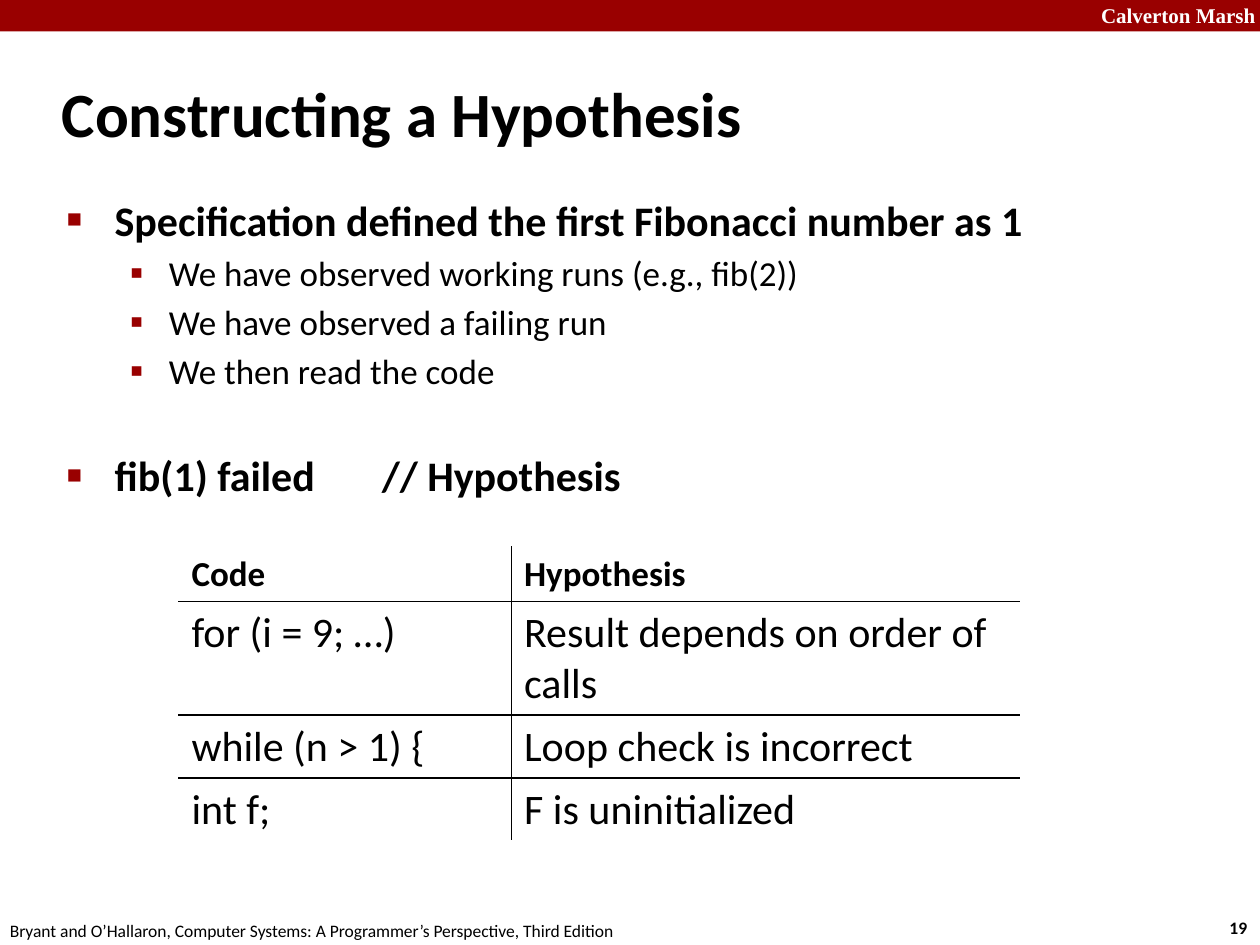
from lxml.etree import SubElement
from pptx import Presentation
from pptx.dml.color import RGBColor
from pptx.enum.shapes import MSO_SHAPE
from pptx.enum.text import MSO_ANCHOR, MSO_AUTO_SIZE, PP_ALIGN
from pptx.oxml import parse_xml
from pptx.oxml.ns import nsdecls, qn
from pptx.util import Inches, Pt

RED, BLACK, WHITE = "990000", "000000", "FFFFFF"
SANS, SERIF = "Calibri", "Times New Roman"

TITLE = "Constructing a Hypothesis"
BULLETS = [
    (0, "Specification defined the first Fibonacci number as 1", 4.8),
    (1, "We have observed working runs (e.g., fib(2))", 4),
    (1, "We have observed a failing run", 4),
    (1, "We then read the code", 4),
    (0, "fib(1) failed\t\t// Hypothesis", 33),
]
LEVELS = [
    dict(size=24, bold=True, left=0.38, hanging=0.38, mark="■", percent=60),
    dict(size=20, bold=False, left=0.81, hanging=0.31, mark="▪", percent=110),
]
ROWS = [
    ("Code", "Hypothesis"),
    ("for (i = 9; …)", "Result depends on order of calls"),
    ("while (n > 1) {", "Loop check is incorrect"),
    ("int f;", "F is uninitialized"),
]
COLUMN_WIDTHS = [2.64, 4.03]
ROW_HEIGHT = 0.41
LABELS = [
    ("Calverton Marsh", (8.64, -0.03, 1.43, 0.3), 12, SERIF, WHITE, True, True),
    ("19", (9.66, 7.23, 0.37, 0.27), 10, SANS, BLACK, True, False),
    ("Bryant and O’Hallaron, Computer Systems: A Programmer’s Perspective, Third Edition",
     (-0.02, 7.25, 5.08, 0.27), 10, SANS, BLACK, False, False),
]


def color(value):
    return RGBColor.from_string(value)


def add_span(para, text, size, bold=False, font=SANS, ink=BLACK):
    span = para.add_run()
    span.text = text
    span.font.size = Pt(size)
    span.font.bold = bold
    span.font.name = font
    span.font.color.rgb = color(ink)


def place(box, left, top, width, height):
    box.left, box.top = Inches(left), Inches(top)
    box.width, box.height = Inches(width), Inches(height)


def set_indent(para, left, hanging):
    props = para._p.get_or_add_pPr()
    props.set("marL", str(Inches(left)))
    props.set("indent", str(-Inches(hanging)))
    return props


def add_bullet(para, level, text, space):
    style = LEVELS[level]
    para.level = level
    para.space_before = Pt(space)
    props = set_indent(para, style["left"], style["hanging"])
    tint = SubElement(props, qn("a:buClr"))
    SubElement(tint, qn("a:srgbClr")).set("val", RED)
    SubElement(props, qn("a:buSzPct")).set("val", str(style["percent"] * 1000))
    SubElement(props, qn("a:buChar")).set("char", style["mark"])
    add_span(para, text, style["size"], style["bold"])


def set_borders(cell, sides):
    props = cell._tc.get_or_add_tcPr()
    for position, side in enumerate(sides):
        props.insert(position, parse_xml(
            f'<a:ln{side} {nsdecls("a")} w="{Pt(1)}"><a:solidFill>'
            f'<a:srgbClr val="{BLACK}"/></a:solidFill></a:ln{side}>'))


def add_labels(page):
    for text, frame, size, font, ink, bold, wrap in LABELS:
        box = page.shapes.add_textbox(*map(Inches, frame))
        box.text_frame.word_wrap = wrap
        add_span(box.text_frame.paragraphs[0], text, size, bold, font, ink)


def add_hypotheses(page):
    table = page.shapes.add_table(
        len(ROWS), len(COLUMN_WIDTHS), Inches(1.42), Inches(4.34),
        Inches(sum(COLUMN_WIDTHS)), Inches(ROW_HEIGHT * len(ROWS))).table
    table.first_row = table.horz_banding = False
    for column, width in zip(table.columns, COLUMN_WIDTHS):
        column.width = Inches(width)
    last_row, last_column = len(ROWS) - 1, len(COLUMN_WIDTHS) - 1
    for r, texts in enumerate(ROWS):
        table.rows[r].height = Inches(ROW_HEIGHT)
        for c, text in enumerate(texts):
            cell = table.cell(r, c)
            cell.fill.solid()
            cell.fill.fore_color.rgb = color(WHITE)
            inner = {"L": c > 0, "R": c < last_column, "T": r > 0, "B": r < last_row}
            set_borders(cell, [side for side, shown in inner.items() if shown])
            header = r == 0
            add_span(cell.text_frame.paragraphs[0], text, 20 if header else 24, header)


def main():
    deck = Presentation()
    deck.slide_width, deck.slide_height = Inches(10), Inches(7.5)
    page = deck.slides.add_slide(deck.slide_layouts[1])

    band = page.shapes.add_shape(MSO_SHAPE.RECTANGLE, 0, 0, deck.slide_width, Inches(0.25))
    band.shadow.inherit = False
    band.fill.solid()
    band.fill.fore_color.rgb = color(RED)
    band.line.fill.background()
    add_labels(page)

    title = page.shapes.title
    place(title, 0.39, 0.48, 8.3, 0.83)
    title.text_frame.vertical_anchor = MSO_ANCHOR.MIDDLE
    title.text_frame.auto_size = MSO_AUTO_SIZE.NONE
    heading = title.text_frame.paragraphs[0]
    heading.alignment = PP_ALIGN.LEFT
    set_indent(heading, 0.13, 0.13)
    add_span(heading, TITLE, 36, True)

    body = page.placeholders[1]
    place(body, 0.43, 1.49, 8.64, 5.44)
    frame = body.text_frame
    frame.auto_size = MSO_AUTO_SIZE.NONE
    for index, bullet in enumerate(BULLETS):
        para = frame.add_paragraph() if index else frame.paragraphs[0]
        add_bullet(para, *bullet)

    add_hypotheses(page)
    deck.save("out.pptx")


if __name__ == "__main__":
    main()
